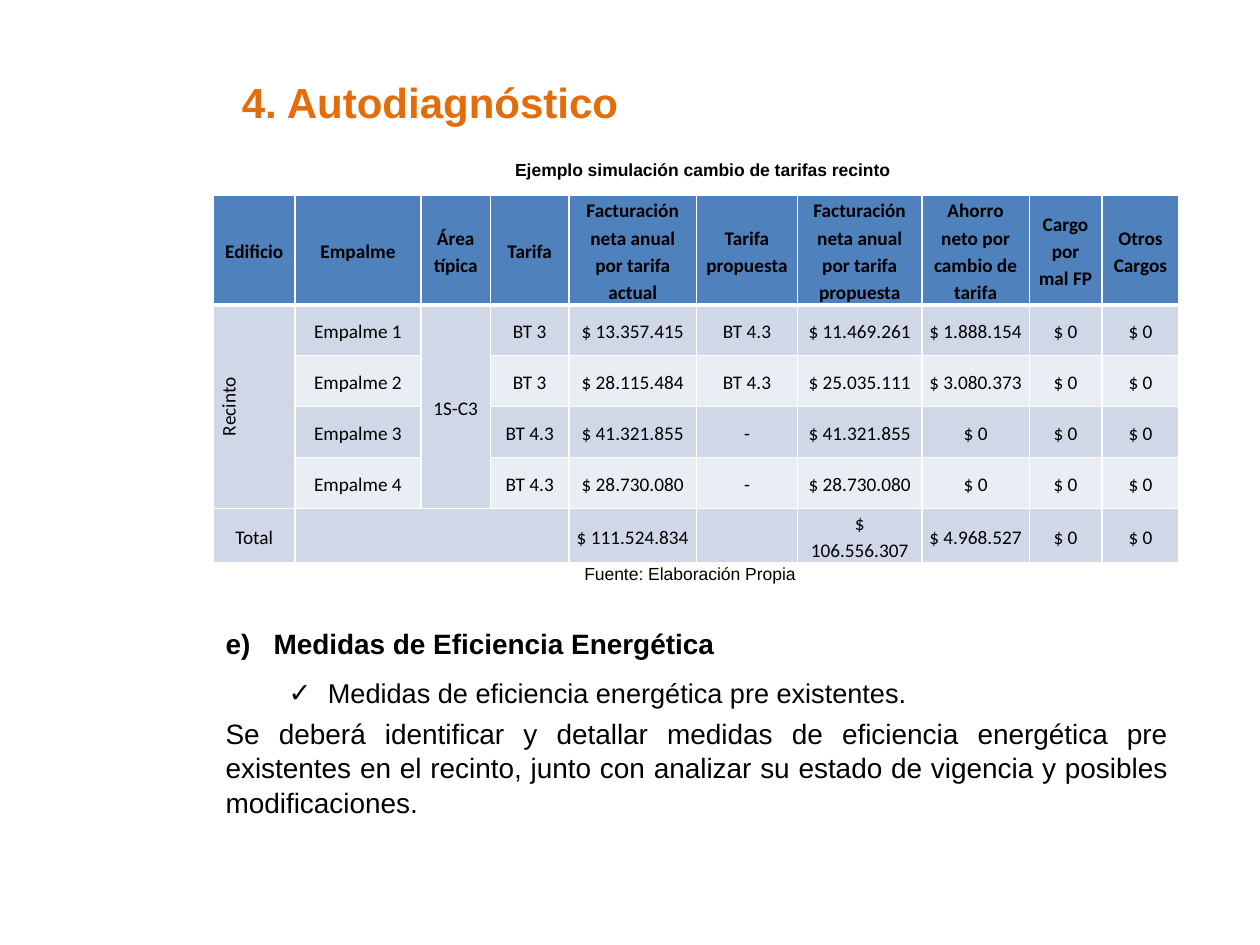
from lxml import etree
from pptx import Presentation
from pptx.dml.color import RGBColor
from pptx.enum.text import MSO_ANCHOR, MSO_AUTO_SIZE, PP_ALIGN
from pptx.oxml.ns import qn
from pptx.util import Pt

ORANGE = RGBColor(0xE4, 0x6C, 0x0A)
BLACK = RGBColor(0x00, 0x00, 0x00)
WHITE = RGBColor(0xFF, 0xFF, 0xFF)
BLUE = RGBColor(0x4F, 0x81, 0xBD)
BAND_DARK = RGBColor(0xD0, 0xD8, 0xE8)
BAND_LIGHT = RGBColor(0xE9, 0xED, 0xF4)

HEADERS = [
    "Edificio", "Empalme", "Área típica", "Tarifa",
    "Facturación neta anual por tarifa actual", "Tarifa propuesta",
    "Facturación neta anual por tarifa propuesta",
    "Ahorro neto por cambio de tarifa", "Cargo por mal FP", "Otros Cargos",
]
TARIFF_ROWS = [
    ["Recinto", "Empalme 1", "1S-C3", "BT 3", "$ 13.357.415", "BT 4.3",
     "$ 11.469.261", "$ 1.888.154", "$ 0", "$ 0"],
    ["", "Empalme 2", "", "BT 3", "$ 28.115.484", "BT 4.3",
     "$ 25.035.111", "$ 3.080.373", "$ 0", "$ 0"],
    ["", "Empalme 3", "", "BT 4.3", "$ 41.321.855", "-",
     "$ 41.321.855", "$ 0", "$ 0", "$ 0"],
    ["", "Empalme 4", "", "BT 4.3", "$ 28.730.080", "-",
     "$ 28.730.080", "$ 0", "$ 0", "$ 0"],
    ["Total", "", "", "", "$ 111.524.834", "",
     "$ 106.556.307", "$ 4.968.527", "$ 0", "$ 0"],
]
COLUMN_WIDTHS = [46.6, 72, 39.7, 44.9, 72.9, 57.7, 71.1, 61.4, 41.4, 44.3]
MERGES = [((1, 0), (4, 0)), ((1, 2), (4, 2)), ((5, 1), (5, 3))]
HEADER_HEIGHT, ROW_HEIGHT = 61.5, 29.1


def apply_format(target, values):
    for attribute, value in values.items():
        setattr(target, attribute, value)


class TariffSlide:
    """Holds the text style and the slide being filled."""

    text_font = "Arial"
    table_font = "Calibri"

    def __init__(self, slide):
        self.slide = slide

    def add_text(self, paragraph, text, size, color=BLACK, bold=False, font=text_font):
        run = paragraph.add_run()
        run.text = text
        apply_format(run.font, {"name": font, "size": Pt(size), "bold": bold})
        run.font.color.rgb = color

    def place(self, shape, left, top, width, height):
        apply_format(shape, {"left": Pt(left), "top": Pt(top),
                             "width": Pt(width), "height": Pt(height)})

    def title(self, text, *box):
        heading = self.slide.shapes.title
        self.place(heading, *box)
        apply_format(heading.text_frame, {
            "auto_size": MSO_AUTO_SIZE.NONE, "word_wrap": True,
            "vertical_anchor": MSO_ANCHOR.TOP, "margin_top": Pt(6.2)})
        paragraph = heading.text_frame.paragraphs[0]
        paragraph.alignment = PP_ALIGN.LEFT
        self.add_text(paragraph, text, 24, ORANGE, True)

    def caption(self, text, *box, bold=False, align=PP_ALIGN.LEFT):
        note = self.slide.shapes.add_textbox(*map(Pt, box))
        note.text_frame.word_wrap = True
        paragraph = note.text_frame.paragraphs[0]
        paragraph.alignment = align
        self.add_text(paragraph, text, 10, bold=bold)

    def body(self, items, *box):
        measures = self.slide.placeholders[1]
        self.place(measures, *box)
        frame = measures.text_frame
        apply_format(frame, {"auto_size": MSO_AUTO_SIZE.NONE, "word_wrap": True,
                             "vertical_anchor": MSO_ANCHOR.TOP})
        for index, item in enumerate(items):
            paragraph = frame.add_paragraph() if index else frame.paragraphs[0]
            self.bullet(paragraph, item.get("bullet"), *item["indent"])
            apply_format(paragraph, {
                "alignment": PP_ALIGN.JUSTIFY, "level": item.get("level", 0),
                "space_before": Pt(3.2 if index else 0),
                "space_after": Pt(item["after"]),
                "line_spacing": item.get("spacing", 1.0)})
            self.add_text(paragraph, item["text"], item["size"],
                          bold=item.get("bold", False))

    def bullet(self, paragraph, mark, left, hanging):
        properties = paragraph._p.get_or_add_pPr()
        properties.set("marL", str(Pt(left)))
        properties.set("indent", str(Pt(-hanging)))
        if mark:
            etree.SubElement(properties, qn("a:buChar"), char=mark)
        else:
            etree.SubElement(properties, qn("a:buNone"))

    def borders(self, cell, **widths):
        properties = cell._tc.get_or_add_tcPr()
        for side in "LRTB":
            line = etree.SubElement(properties, qn(f"a:ln{side}"),
                                    w=str(Pt(widths.get(side, 1))))
            fill = etree.SubElement(line, qn("a:solidFill"))
            etree.SubElement(fill, qn("a:srgbClr"), val=str(WHITE))

    def table(self, rows, left, top):
        height = HEADER_HEIGHT + ROW_HEIGHT * (len(rows) - 1)
        tariffs = self.slide.shapes.add_table(
            len(rows), len(COLUMN_WIDTHS), Pt(left), Pt(top),
            Pt(sum(COLUMN_WIDTHS)), Pt(height)).table
        for column, width in zip(tariffs.columns, COLUMN_WIDTHS):
            column.width = Pt(width)
        for r, values in enumerate(rows):
            tariffs.rows[r].height = Pt(ROW_HEIGHT if r else HEADER_HEIGHT)
            for c, text in enumerate(values):
                self.cell(tariffs.cell(r, c), text, r)
        for first, last in MERGES:
            tariffs.cell(*first).merge(tariffs.cell(*last))
        tariffs.cell(1, 0)._tc.get_or_add_tcPr().set("vert", "vert270")

    def cell(self, cell, text, row):
        # A thick rule separates the header from the first row
        self.borders(cell, B=1 if row else 3, T=3 if row == 1 else 1)
        cell.fill.solid()
        band = BAND_DARK if row % 2 else BAND_LIGHT
        cell.fill.fore_color.rgb = band if row else BLUE
        apply_format(cell, {
            "vertical_anchor": MSO_ANCHOR.MIDDLE, "margin_left": Pt(3.6),
            "margin_right": Pt(3.6), "margin_top": 0, "margin_bottom": 0})
        paragraph = cell.text_frame.paragraphs[0]
        apply_format(paragraph, {"alignment": PP_ALIGN.CENTER, "line_spacing": 1.15})
        if text:
            self.add_text(paragraph, text, 11, bold=row == 0, font=self.table_font)


def main():
    presentation = Presentation()
    apply_format(presentation, {"slide_width": Pt(720), "slide_height": Pt(540)})
    page = TariffSlide(presentation.slides.add_slide(presentation.slide_layouts[1]))

    # Heading
    page.title("4. Autodiagnóstico", 131, 37.4, 517.7, 32.4)

    # Energy efficiency measures
    page.body([
        {"text": "e)\tMedidas de Eficiencia Energética", "size": 16, "bold": True,
         "indent": (27.4, 27.4), "after": 6},
        {"text": "Medidas de eficiencia energética pre existentes.", "size": 15.5,
         "bullet": "✓", "level": 1, "indent": (58.5, 22.5), "after": 0},
        {"text": "Se deberá identificar y detallar medidas de eficiencia energética "
                 "pre existentes en el recinto, junto con analizar su estado de "
                 "vigencia y posibles modificaciones.",
         "size": 16, "indent": (0, 0), "after": 6, "spacing": 1.04},
    ], 121.7, 354.6, 553, 164.5)

    # Tariff simulation table with its captions
    page.table([HEADERS] + TARIFF_ROWS, 122, 111.8)
    page.caption("Ejemplo simulación cambio de tarifas recinto",
                 287.3, 87.1, 319, 19.4, bold=True)
    page.caption("Fuente: Elaboración Propia", 313.2, 318.2, 162, 19.4,
                 align=PP_ALIGN.CENTER)

    presentation.save("out.pptx")


if __name__ == "__main__":
    main()
